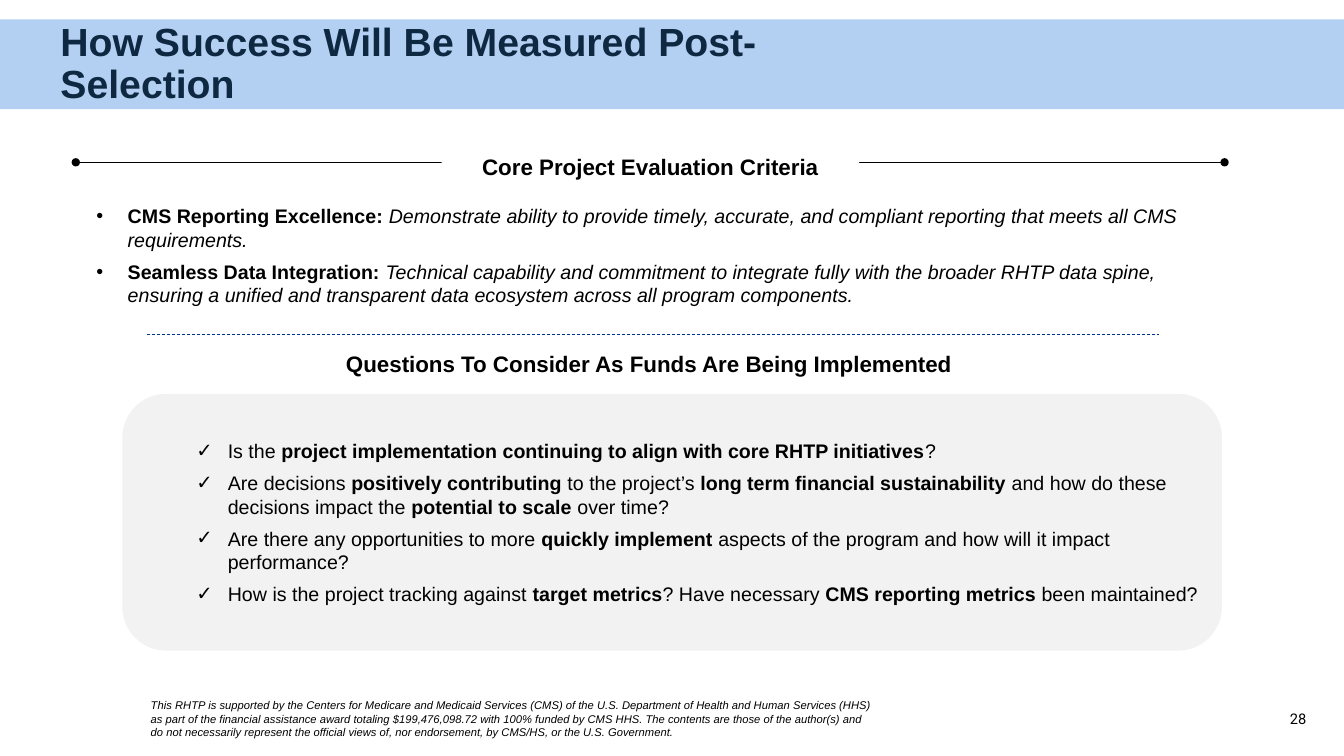
import pptx
import pptx.dml.color
import pptx.enum.dml
import pptx.enum.shapes
import pptx.enum.text
import pptx.oxml.ns
import pptx.util
from pptx.util import Cm

ALIGN = pptx.enum.text.PP_ALIGN
ANCHOR = pptx.enum.text.MSO_ANCHOR
SHAPE = pptx.enum.shapes.MSO_SHAPE
DASH = pptx.enum.dml.MSO_LINE.DASH

BLACK, WHITE, NAVY = "000000", "FFFFFF", "0E2841"
BAND_BLUE, RULE_BLUE, CARD_GREY = "B3D0F3", "00338D", "F2F2F2"

CRITERIA = [
    [("CMS Reporting Excellence: ", "b"),
     ("Demonstrate ability to provide timely, accurate, and compliant reporting "
      "that meets all CMS requirements.", "i")],
    [("Seamless Data Integration: ", "b"),
     ("Technical capability and commitment to integrate fully with the broader RHTP "
      "data spine, ensuring a unified and transparent data ecosystem across all "
      "program components.", "i")],
]
QUESTIONS = [
    [("Is the ", ""),
     ("project implementation continuing to align with core RHTP initiatives", "b"),
     ("?", "")],
    [("Are decisions ", ""), ("positively contributing ", "b"),
     ("to the project’s ", ""), ("long term financial sustainability ", "b"),
     ("and how do these decisions impact the ", ""),
     ("potential to scale", "b"), (" over time?", "")],
    [("Are there any opportunities to more ", ""), ("quickly implement ", "b"),
     ("aspects of the program and how will it impact performance?", "")],
    [("How is the project tracking against ", ""), ("target metrics", "b"),
     ("? Have necessary ", ""), ("CMS reporting metrics ", "b"),
     ("been maintained?", "")],
]
FUNDING_NOTE = (
    "This RHTP is supported by the Centers for Medicare and Medicaid Services (CMS) of "
    "the U.S. Department of Health and Human Services (HHS) as part of the financial "
    "assistance award totaling $199,476,098.72 with 100% funded by CMS HHS. The contents "
    "are those of the author(s) and do not necessarily represent the official views of, "
    "nor endorsement, by CMS/HS, or the U.S. Government.")


def rgb(color):
    return pptx.dml.color.RGBColor.from_string(color)


def add_xml(parent, tag, **attributes):
    child = parent.makeelement(pptx.oxml.ns.qn("a:" + tag), attributes)
    parent.append(child)
    return child


def add_run(paragraph, text, style, size, color=BLACK, font="Arial"):
    run = paragraph.add_run()
    run.text = text
    run.font.name = font
    run.font.size = pptx.util.Pt(size)
    run.font.bold = "b" in style
    run.font.italic = "i" in style
    run.font.color.rgb = rgb(color)


def add_block(slide, kind, left, top, width, height, fill):
    block = slide.shapes.add_shape(kind, Cm(left), Cm(top), Cm(width), Cm(height))
    block.shadow.inherit = False
    block.fill.solid()
    block.fill.fore_color.rgb = rgb(fill)
    block.line.fill.background()
    return block


def add_label(slide, left, top, width, height):
    label = slide.shapes.add_textbox(Cm(left), Cm(top), Cm(width), Cm(height))
    label.text_frame.word_wrap = True
    return label.text_frame


def add_heading(slide, text, left, top, width, height):
    heading = add_block(slide, SHAPE.RECTANGLE, left, top, width, height, WHITE)
    heading.text_frame.vertical_anchor = ANCHOR.MIDDLE
    paragraph = heading.text_frame.paragraphs[0]
    paragraph.alignment = ALIGN.CENTER
    add_run(paragraph, text, "b", 16)


def add_rule(slide, left, right, y, color, weight):
    rule = slide.shapes.add_connector(
        pptx.enum.shapes.MSO_CONNECTOR.STRAIGHT, Cm(left), Cm(y), Cm(right), Cm(y))
    rule.line.color.rgb = rgb(color)
    rule.line.width = pptx.util.Pt(weight)
    add_xml(rule._element.spPr, "effectLst")
    return rule


def fill_list(frame, items, bullet, indent):
    for number, item in enumerate(items):
        paragraph = frame.add_paragraph() if number else frame.paragraphs[0]
        paragraph.alignment = ALIGN.LEFT
        paragraph.space_after = pptx.util.Pt(6)
        properties = paragraph._p.get_or_add_pPr()
        properties.set("marL", str(Cm(indent)))
        properties.set("indent", str(Cm(-0.79)))
        add_xml(add_xml(properties, "buClr"), "srgbClr", val=BLACK)
        add_xml(properties, "buFont", typeface="Arial")
        add_xml(properties, "buChar", char=bullet)
        for text, style in item:
            add_run(paragraph, text, style, 14)


def add_title(slide, text):
    band = add_block(slide, SHAPE.RECTANGLE, 0, 0.49, 33.87, 2.26, BAND_BLUE)
    slide.shapes._spTree.insert(2, band._element)
    title = slide.shapes.title
    title.left, title.top, title.width, title.height = Cm(1.27), Cm(0.49), Cm(20.88), Cm(2.29)
    frame = title.text_frame
    frame.auto_size = pptx.enum.text.MSO_AUTO_SIZE.NONE
    frame.vertical_anchor = ANCHOR.MIDDLE
    paragraph = frame.paragraphs[0]
    paragraph.alignment = ALIGN.LEFT
    paragraph.line_spacing = 0.9
    add_run(paragraph, text, "b", 28, NAVY)


def main():
    deck = pptx.Presentation()
    deck.slide_width, deck.slide_height = Cm(33.87), Cm(19.05)
    slide = deck.slides.add_slide(deck.slide_layouts[5])

    add_title(slide, "How Success Will Be Measured Post-Selection")

    criteria_rule = add_rule(slide, 1.91, 30.86, 4.09, BLACK, 0.75)
    line_properties = criteria_rule.line._get_or_add_ln()
    for end in ("headEnd", "tailEnd"):
        add_xml(line_properties, end, type="oval")
    add_heading(slide, "Core Project Evaluation Criteria", 11.13, 3.77, 10.52, 0.86)
    criteria = add_label(slide, 2.18, 5.02, 28.42, 2.87)
    fill_list(criteria, CRITERIA, "•", 0.79)

    divider = add_rule(slide, 3.71, 29.21, 8.43, RULE_BLUE, 0.5)
    divider.line.dash_style = DASH

    add_heading(slide, "Questions To Consider As Funds Are Being Implemented ",
                7.01, 8.79, 18.85, 0.74)
    card = add_block(slide, SHAPE.ROUNDED_RECTANGLE, 3.12, 9.96, 27.64, 6.4, CARD_GREY)
    card.line.color.rgb = rgb(CARD_GREY)
    card.line.width = pptx.util.Pt(2)
    card.text_frame.vertical_anchor = ANCHOR.MIDDLE
    card.text_frame.margin_right = Cm(0.2)
    fill_list(card.text_frame, QUESTIONS, "✓", 2.06)

    note = add_label(slide, 3.55, 17.48, 18.85, 1.27)
    add_run(note.paragraphs[0], FUNDING_NOTE, "i", 8)
    page = add_label(slide, 25.27, 17.6, 7.9, 1.02)
    page.vertical_anchor = ANCHOR.MIDDLE
    page.paragraphs[0].alignment = ALIGN.RIGHT
    add_run(page.paragraphs[0], "28", "", 10.5, font="Roboto")

    deck.save("out.pptx")


if __name__ == "__main__":
    main()
